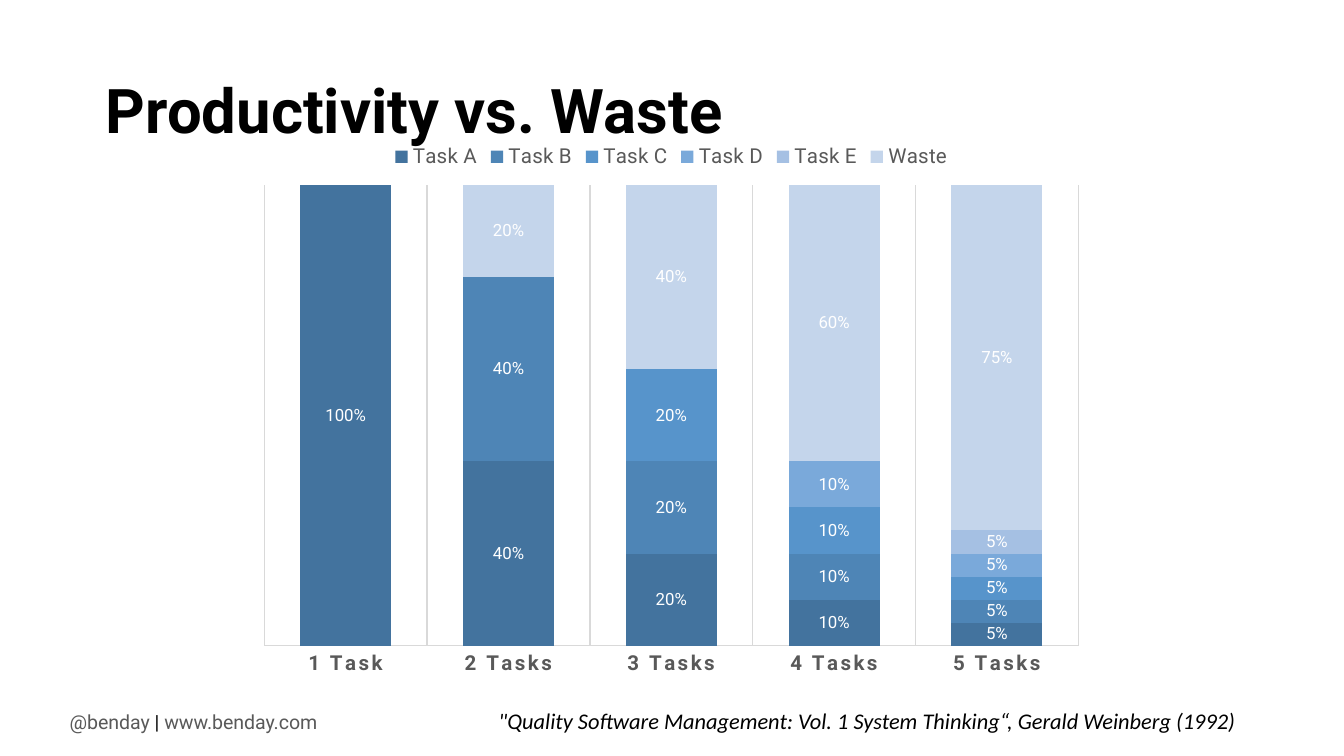
from lxml.etree import SubElement
from pptx import Presentation
from pptx.chart.data import CategoryChartData
from pptx.dml.color import RGBColor
from pptx.enum.chart import XL_CHART_TYPE, XL_LABEL_POSITION, XL_LEGEND_POSITION, XL_TICK_MARK
from pptx.enum.text import MSO_ANCHOR
from pptx.oxml.ns import qn
from pptx.util import Inches, Pt


def style_font(font, color, **values):
    font.color.rgb = RGBColor.from_string(color)
    for name, value in values.items():
        setattr(font, name, value)


deck = Presentation()
deck.slide_width = Inches(10)
deck.slide_height = Inches(10 * 9 / 16)
page = deck.slides.add_slide(deck.slide_layouts[6])

texts = [
    ((0.42, 5.23, 2.08, 0.28), False, MSO_ANCHOR.TOP, 1,
     [("@benday", "595959"), (" | ", "000000"), ("www.benday.com", "595959")],
     {"name": "Roboto", "size": Pt(10.5)}),
    ((0.69, 0.3, 8.62, 1.09), True, MSO_ANCHOR.MIDDLE, 0.9,
     [("Productivity vs. Waste", "000000")],
     {"name": "Roboto", "size": Pt(33), "bold": True}),
    ((3.61, 5.21, 5.75, 0.3), False, MSO_ANCHOR.TOP, 1,
     [("\"Quality Software Management: Vol. 1 System Thinking“, Gerald Weinberg (1992)", "000000")],
     {"name": "Calibri", "size": Pt(12), "italic": True}),
]
for place, wrap, anchor, spacing, spans, values in texts:
    box = page.shapes.add_textbox(*map(Inches, place))
    box.text_frame.word_wrap = wrap
    box.text_frame.vertical_anchor = anchor
    para = box.text_frame.paragraphs[0]
    para.line_spacing = spacing
    for text, color in spans:
        span = para.add_run()
        span.text = text
        style_font(span.font, color, **values)

series_rows = [
    ("Task A", "43739E", (1, 0.4, 0.2, 0.1, 0.05)),
    ("Task B", "4E85B6", (0, 0.4, 0.2, 0.1, 0.05)),
    ("Task C", "5794CB", (0, 0, 0.2, 0.1, 0.05)),
    ("Task D", "7AA9DA", (0, 0, 0, 0.1, 0.05)),
    ("Task E", "A5C0E3", (0, 0, 0, 0, 0.05)),
    ("Waste", "C4D5EB", (0, 0.2, 0.4, 0.6, 0.75)),
]
chart_data = CategoryChartData(number_format="0%")
chart_data.categories = ["1 Task", "2 Tasks", "3 Tasks", "4 Tasks", "5 Tasks"]
for name, color, values in series_rows:
    chart_data.add_series(name, values)

chart = page.shapes.add_chart(
    XL_CHART_TYPE.COLUMN_STACKED_100, *map(Inches, (1.84, 0.96, 6.31, 4.18)), chart_data).chart
style_font(chart.font, "000000", name="Roboto", size=Pt(10))
chart.has_title = False
chart.has_legend = True
chart.legend.position = XL_LEGEND_POSITION.TOP
chart.legend.include_in_layout = False
style_font(chart.legend.font, "595959", name="Roboto", size=Pt(11))

task_axis = chart.category_axis
task_axis.major_tick_mark = XL_TICK_MARK.NONE
task_axis.has_major_gridlines = True
for line in (task_axis.format.line, task_axis.major_gridlines.format.line):
    line.color.rgb = RGBColor.from_string("D9D9D9")
    line.width = Pt(0.75)
task_font = task_axis.tick_labels.font
style_font(task_font, "595959", name="Roboto", size=Pt(11), bold=True)
task_axis._element.find(".//" + qn("a:defRPr")).set("spc", "120")

share_axis = chart.value_axis
share_axis.visible = False
share_axis.has_major_gridlines = False
share_axis.minimum_scale, share_axis.maximum_scale = 0, 1
share_axis.tick_labels.number_format = "0%"
share_axis.tick_labels.number_format_is_linked = False

plot = chart.plots[0]
plot.gap_width, plot.overlap = 79, 100
plot.vary_by_categories = False
for series, (name, color, values) in zip(plot.series, series_rows):
    series.format.fill.solid()
    series.format.fill.fore_color.rgb = RGBColor.from_string(color)
    labels = series.data_labels
    labels.show_value = True
    labels.position = XL_LABEL_POSITION.CENTER
    labels.number_format = "0%;;"
    labels.number_format_is_linked = False
    style_font(labels.font, "FFFFFF", name="Roboto", size=Pt(9))

plot_area = chart._chartSpace.find(".//" + qn("c:plotArea"))
layout = plot_area.find(qn("c:layout"))
if layout is None:
    layout = SubElement(plot_area, qn("c:layout"))
    plot_area.insert(0, layout)
manual = SubElement(layout, qn("c:manualLayout"))
for tag, value in [("layoutTarget", "inner"), ("xMode", "edge"), ("yMode", "edge"),
                   ("x", "0.02"), ("y", "0.1"), ("w", "0.96"), ("h", "0.82")]:
    SubElement(manual, qn("c:" + tag)).set("val", value)

deck.save("out.pptx")
